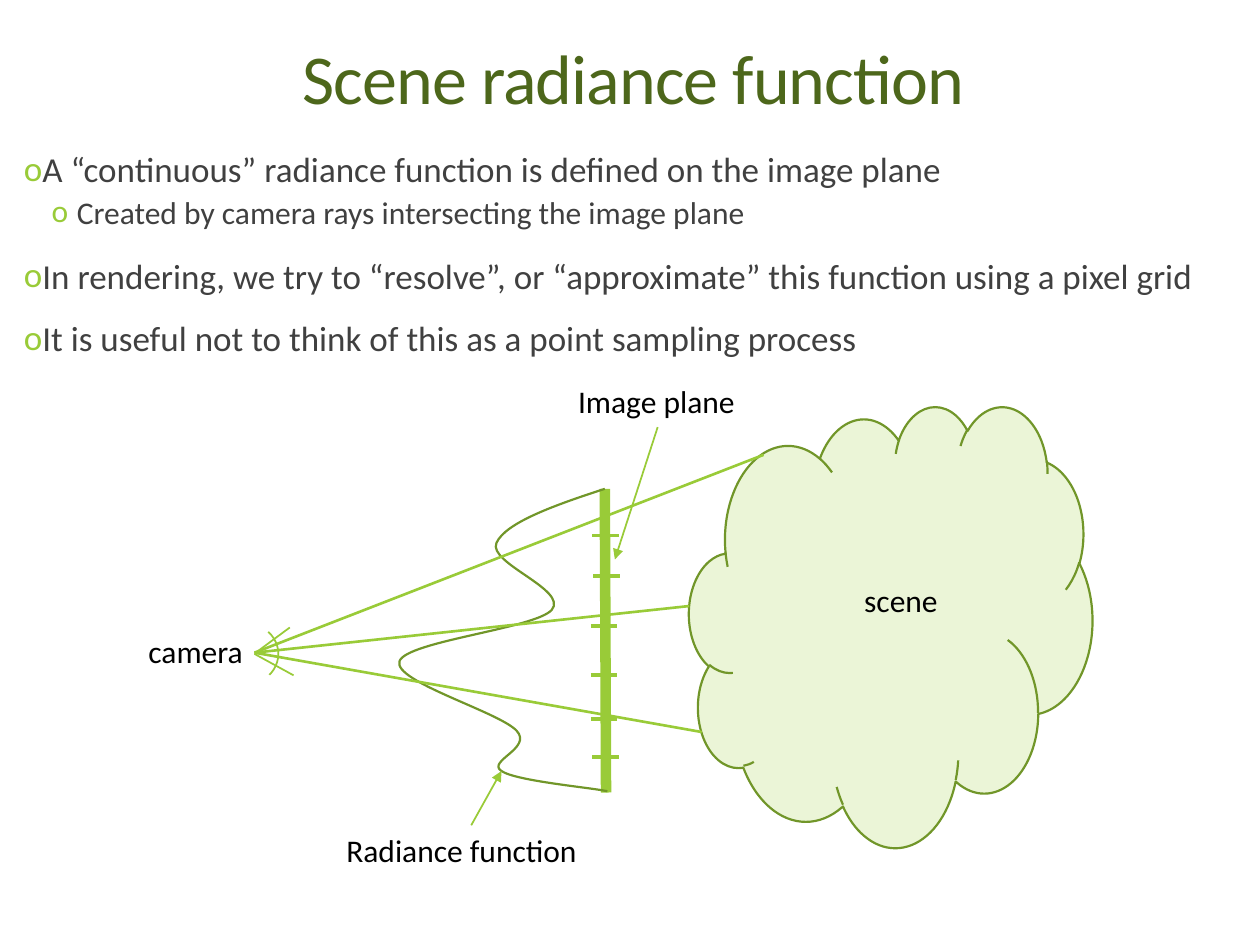
from dataclasses import dataclass

from lxml import etree
from pptx import Presentation
from pptx.dml.color import RGBColor
from pptx.enum import shapes, text
from pptx.oxml import ns
from pptx.util import Inches, Pt

Point = tuple[float, float]


@dataclass(frozen=True)
class Theme:
    font: str = "Calibri"
    title: str = "4D671B"
    body: str = "404040"
    label: str = "000000"
    accent: str = "99CB38"
    outline: str = "719629"
    cloud: str = "EBF5D7"
    title_size: float = 40
    body_size: float = 20
    small_size: float = 18


@dataclass(frozen=True)
class Stroke:
    start: Point
    end: Point
    width: float
    arrow: bool = False


@dataclass(frozen=True)
class Label:
    words: str
    left: float
    top: float
    width: float


@dataclass(frozen=True)
class Bullet:
    words: str
    level: int = 0


@dataclass(frozen=True)
class BulletStyle:
    size: float
    margin: float
    indent: float
    before: float
    after: float


THEME = Theme()
BULLET_STYLES = (
    BulletStyle(THEME.body_size, 0.1, -0.1, 12, 2),
    BulletStyle(THEME.small_size, 0.42, -0.2, 2, 4),
)
BULLETS = (
    Bullet("A “continuous” radiance function is defined on the image plane"),
    Bullet("Created by camera rays intersecting the image plane", 1),
    Bullet("In rendering, we try to “resolve”, or “approximate” this function using a pixel grid"),
    Bullet("It is useful not to think of this as a point sampling process"),
)
LABELS = (
    Label("Image plane", 4.49, 2.98, 1.46),
    Label("camera", 1.08, 4.97, 0.96),
    Label("scene", 6.76, 4.56, 0.79),
    Label("Radiance function", 2.65, 6.55, 2.05),
)
CAMERA = (2.02, 5.18)
IMAGE_PLANE = Stroke((4.8, 3.88), (4.81, 6.29), 6)
EYELIDS = (Stroke((2.03, 5.18), (2.3, 4.98), 1), Stroke((2.02, 5.19), (2.33, 5.36), 1))
RAYS = tuple(Stroke(CAMERA, hit, 1.5) for hit in ((6.06, 3.61), (5.47, 4.81), (5.57, 5.81)))
PIXEL_EDGES = tuple(
    Stroke((left, y), (left + 0.21, y), 2.25)
    for left, y in ((4.7, 4.25), (4.71, 4.57), (4.69, 4.97), (4.69, 5.36), (4.69, 5.71), (4.7, 6.01))
)
POINTERS = (Stroke((5.22, 3.39), (4.88, 4.44), 1, True), Stroke((3.74, 6.55), (3.98, 6.12), 1, True))
RADIANCE_START = (4.8, 3.88)
RADIANCE_CURVES = (
    ((4.4, 4.01), (4.01, 4.15), (3.94, 4.31)),
    ((3.87, 4.47), (4.51, 4.68), (4.38, 4.84)),
    ((4.25, 4.99), (3.22, 5.09), (3.17, 5.25)),
    ((3.12, 5.41), (3.96, 5.65), (4.1, 5.8)),
    ((4.23, 5.94), (3.86, 6.04), (3.98, 6.12)),
    ((4.1, 6.2), (4.68, 6.25), (4.82, 6.28)),
)


def add_node(parent, tag: str, **attributes):
    return etree.SubElement(parent, ns.qn(tag), attributes)


def add_run(paragraph, words: str, size: float, color: str):
    run = paragraph.add_run()
    run.text = words
    run.font.name = THEME.font
    run.font.size = Pt(size)
    run.font.color.rgb = RGBColor.from_string(color)
    return run


def set_line(item, color: str, width: float) -> None:
    item.line.color.rgb = RGBColor.from_string(color)
    item.line.width = Pt(width)


def place(item, left: float, top: float, width: float, height: float) -> None:
    item.left, item.top = Inches(left), Inches(top)
    item.width, item.height = Inches(width), Inches(height)


def write_title(title) -> None:
    place(title, 0.9, 0.31, 8.25, 0.68)
    frame = title.text_frame
    frame.vertical_anchor = text.MSO_ANCHOR.BOTTOM
    frame.auto_size = text.MSO_AUTO_SIZE.NONE
    heading = frame.paragraphs[0]
    heading.alignment = text.PP_ALIGN.CENTER
    heading.line_spacing = 0.85
    run = add_run(heading, "Scene radiance function", THEME.title_size, THEME.title)
    run.font._element.set("spc", "-50")


def write_bullets(slide, bullets: tuple[Bullet, ...]) -> None:
    frame = slide.shapes.add_textbox(Inches(0.19), Inches(1.16), Inches(9.61), Inches(6.14)).text_frame
    frame.word_wrap = True
    frame.margin_left = frame.margin_right = 0
    for index, bullet in enumerate(bullets):
        paragraph = frame.add_paragraph() if index else frame.paragraphs[0]
        style = BULLET_STYLES[bullet.level]
        paragraph.level = bullet.level
        paragraph.line_spacing = 0.9
        paragraph.space_before, paragraph.space_after = Pt(style.before), Pt(style.after)
        properties = paragraph._p.get_or_add_pPr()
        properties.set("marL", str(Inches(style.margin)))
        properties.set("indent", str(Inches(style.indent)))
        add_node(add_node(properties, "a:buClr"), "a:srgbClr", val=THEME.accent)
        add_node(properties, "a:buFont", typeface=THEME.font)
        add_node(properties, "a:buChar", char="o")
        add_run(paragraph, bullet.words, style.size, THEME.body)


def draw_stroke(slide, stroke: Stroke) -> None:
    ends = (Inches(value) for value in stroke.start + stroke.end)
    connector = slide.shapes.add_connector(shapes.MSO_CONNECTOR.STRAIGHT, *ends)
    set_line(connector, THEME.accent, stroke.width)
    if stroke.arrow:
        add_node(connector.line._get_or_add_ln(), "a:tailEnd", type="triangle")
    add_node(connector._element.spPr, "a:effectLst")


def draw_radiance(slide) -> None:
    builder = slide.shapes.build_freeform(*(Inches(value) for value in RADIANCE_START))
    builder.add_line_segments([(Inches(x), Inches(y)) for *_, (x, y) in RADIANCE_CURVES], close=False)
    radiance = builder.convert_to_shape()
    segments = list(radiance._element.iter(ns.qn("a:lnTo")))
    for segment, curve in zip(segments, RADIANCE_CURVES):
        bezier = etree.Element(ns.qn("a:cubicBezTo"))
        for x, y in curve:
            add_node(bezier, "a:pt", x=str(Inches(x) - radiance.left), y=str(Inches(y) - radiance.top))
        segment.getparent().replace(segment, bezier)
    radiance.shadow.inherit = False
    radiance.fill.background()
    set_line(radiance, THEME.outline, 1.25)


def draw_preset(slide, kind, box: tuple[float, float, float, float], color: str, width: float):
    preset = slide.shapes.add_shape(kind, *(Inches(value) for value in box))
    preset.shadow.inherit = False
    preset.fill.background()
    set_line(preset, color, width)
    return preset


def write_label(slide, label: Label) -> None:
    box = slide.shapes.add_textbox(Inches(label.left), Inches(label.top), Inches(label.width), Inches(0.4))
    box.text_frame.word_wrap = False
    box.text_frame.auto_size = text.MSO_AUTO_SIZE.SHAPE_TO_FIT_TEXT
    add_run(box.text_frame.paragraphs[0], label.words, THEME.small_size, THEME.label)


def main() -> None:
    deck = Presentation()
    deck.slide_width, deck.slide_height = Inches(10), Inches(7.5)
    slide = deck.slides.add_slide(deck.slide_layouts[5])
    write_title(slide.shapes.title)
    write_bullets(slide, BULLETS)
    draw_stroke(slide, IMAGE_PLANE)
    draw_radiance(slide)
    scene = draw_preset(slide, shapes.MSO_SHAPE.CLOUD, (5.47, 3.22, 3.2, 3.5), THEME.outline, 1.25)
    scene.fill.solid()
    scene.fill.fore_color.rgb = RGBColor.from_string(THEME.cloud)
    pupil = draw_preset(slide, shapes.MSO_SHAPE.ARC, (1.65, 4.94, 0.56, 0.5), THEME.accent, 1)
    pupil.adjustments[0], pupil.adjustments[1] = 191.29, 23.15
    for stroke in EYELIDS + RAYS + PIXEL_EDGES + POINTERS:
        draw_stroke(slide, stroke)
    for label in LABELS:
        write_label(slide, label)
    deck.save("out.pptx")


if __name__ == "__main__":
    main()
